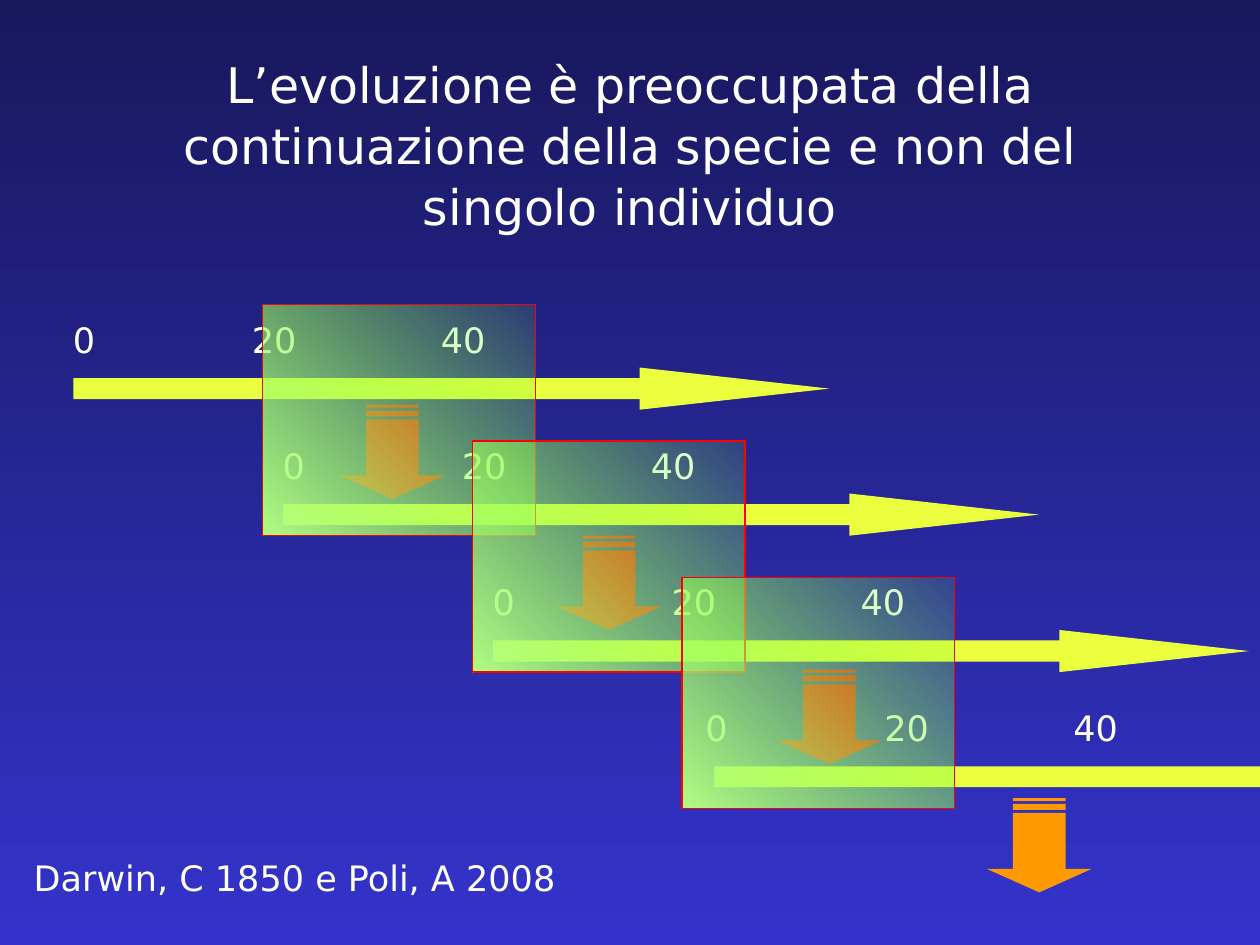
from dataclasses import dataclass

from lxml.etree import SubElement
from pptx import Presentation
from pptx.dml.color import RGBColor
from pptx.enum.shapes import MSO_SHAPE
from pptx.enum.text import MSO_ANCHOR, MSO_AUTO_SIZE, PP_ALIGN
from pptx.oxml.ns import qn
from pptx.util import Cm, Pt


@dataclass(frozen=True)
class Theme:
    font: str = "DejaVu Sans"
    head: int = 28
    body: int = 20
    text: str = "FFFFFF"
    night: str = "18185C"
    day: str = "3333CC"
    life: str = "ECFF3E"
    birth: str = "FF0000"
    later: str = "FF9900"
    pale: str = "B3FF82"
    green: str = "81FF2E"
    edge: str = "FF0000"


class Board:
    """Holds the theme and the current slide."""

    def __init__(self, slide, theme):
        self.slide = slide
        self.theme = theme

    def blend(self, fill, first, last, angle):
        fill.gradient()
        fill.gradient_angle = angle
        for stop, color in zip(fill.gradient_stops, (first, last)):
            stop.color.rgb = RGBColor.from_string(color)

    def words(self, para, text, size):
        run = para.add_run()
        run.text = text
        run.font.name = self.theme.font
        run.font.size = Pt(size)
        run.font.color.rgb = RGBColor.from_string(self.theme.text)

    def title(self, text, x, y, w, h):
        shape = self.slide.shapes.title
        shape.left, shape.top, shape.width, shape.height = map(Cm, (x, y, w, h))
        frame = shape.text_frame
        frame.word_wrap = True
        frame.auto_size = MSO_AUTO_SIZE.NONE
        frame.vertical_anchor = MSO_ANCHOR.BOTTOM
        frame.margin_left = frame.margin_right = 0
        para = frame.paragraphs[0]
        para.alignment = PP_ALIGN.CENTER
        para.line_spacing = 1.04
        self.words(para, text, self.theme.head)

    def label(self, text, x, y, w, h=1.12, tabs=(), wrap=True):
        frame = self.slide.shapes.add_textbox(*map(Cm, (x, y, w, h))).text_frame
        frame.word_wrap = wrap
        para = frame.paragraphs[0]
        self.words(para, text, self.theme.body)
        if tabs:
            stops = SubElement(para._p.get_or_add_pPr(), qn("a:tabLst"))
            for tab in tabs:
                SubElement(stops, qn("a:tab"), pos=str(int(Cm(tab))), algn="l")

    def shape(self, kind, x, y, w, h, color=None, adjust=()):
        shape = self.slide.shapes.add_shape(kind, *map(Cm, (x, y, w, h)))
        shape.shadow.inherit = False
        shape.line.fill.background()
        if color:
            shape.fill.solid()
            shape.fill.fore_color.rgb = RGBColor.from_string(color)
        for i, value in enumerate(adjust):
            shape.adjustments[i] = value
        return shape

    def ages(self, x, y):
        self.label("0\t20\t40", x, y, 9.58, tabs=(3.61, 7.42))

    def span(self, x, y):
        self.shape(MSO_SHAPE.RIGHT_ARROW, x, y, 15.24, 0.85,
                   self.theme.life, (0.5, 4.5))
        self.ages(x - 0.26, y - 1.12)

    def drop(self, x, y, color):
        arrow = self.shape(MSO_SHAPE.STRIPED_RIGHT_ARROW, x, y, 1.9, 2.12,
                           color, (0.5, 0.25))
        arrow.rotation = 90

    def veil(self, x, y):
        box = self.shape(MSO_SHAPE.RECTANGLE, x, y, 5.5, 4.66)
        self.blend(box.fill, self.theme.pale, self.theme.green, 45)
        # Fade the second colour
        tint = box.element.findall(".//" + qn("a:gs"))[-1][0]
        SubElement(tint, qn("a:alpha"), val="12000")
        box.line.color.rgb = RGBColor.from_string(self.theme.edge)
        box.line.width = Pt(0.75)


def main():
    deck = Presentation()
    deck.slide_width, deck.slide_height = Cm(25.4), Cm(19.05)
    theme = Theme()
    board = Board(deck.slides.add_slide(deck.slide_layouts[5]), theme)
    step = 4.23  # shift from one generation to the next

    # Background and title
    board.blend(board.slide.background.fill, theme.night, theme.day, 270)
    board.title("L’evoluzione è preoccupata della continuazione della specie "
                "e non del singolo individuo", 1.9, 1.7, 21.6, 3.18)

    # Births, drawn beneath the veils
    for x, y in ((6.96, 8.05), (11.33, 10.69), (15.77, 13.39)):
        board.drop(x, y, theme.birth)

    # Lifespans with their ages
    for i, y in enumerate((7.41, 9.95, 12.7)):
        board.span(1.48 + i * step, y)

    # Last generation runs off to the right
    board.shape(MSO_SHAPE.RECTANGLE, 14.4, 15.45, 11, 0.42, theme.life)
    board.ages(13.97, 14.12)
    board.drop(20, 15.98, theme.later)

    # Fertile years
    for i in range(3):
        board.veil(5.29 + i * step, 6.14 + i * 2.75)

    # Credit
    board.label("Darwin, C 1850 e Poli, A 2008", 0.43, 17.15, 11.23, wrap=False)

    deck.save("out.pptx")


if __name__ == "__main__":
    main()
